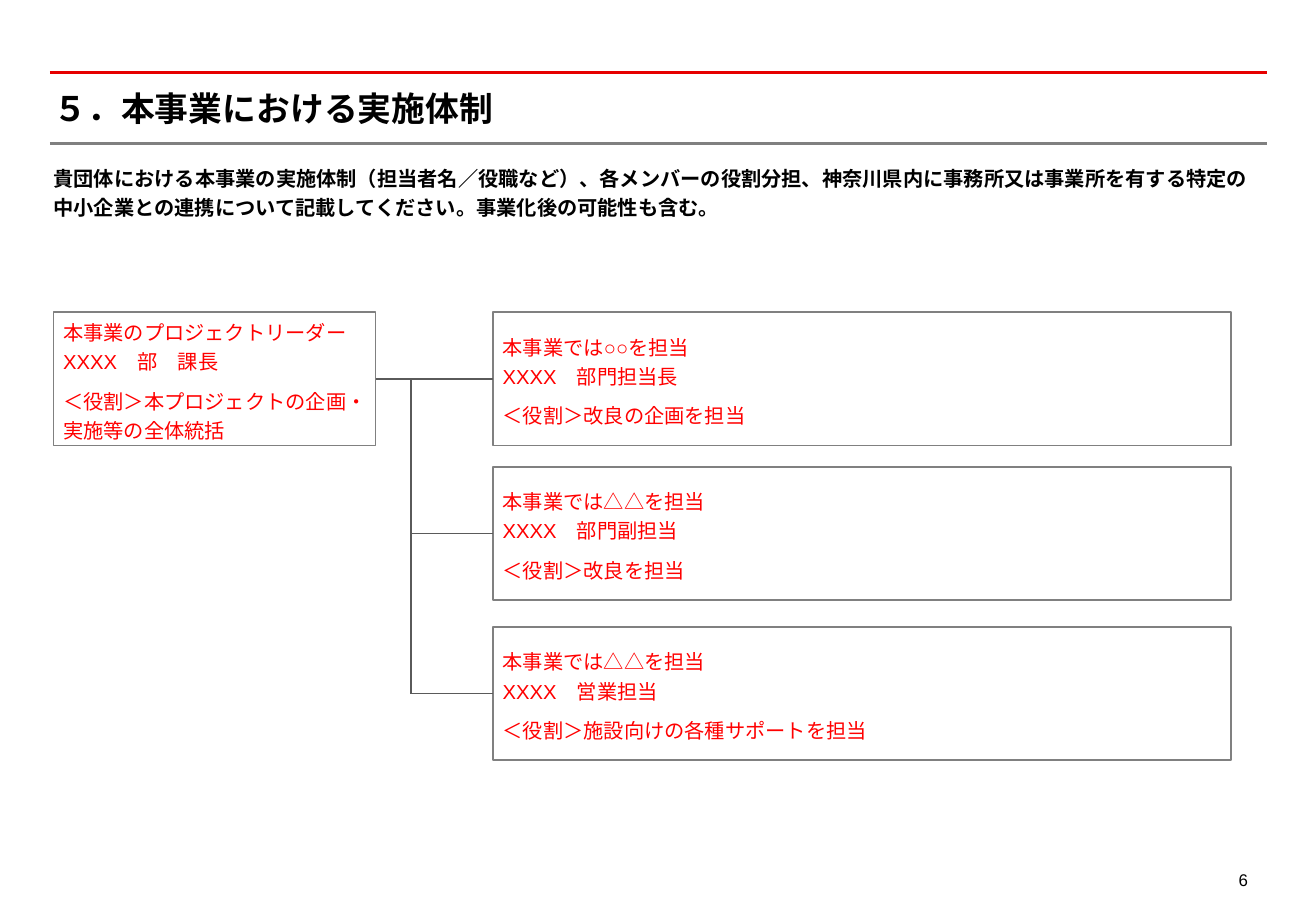
from copy import deepcopy
from itertools import pairwise

from lxml.etree import SubElement
from pptx import Presentation
from pptx.dml.color import RGBColor
from pptx.enum.lang import MSO_LANGUAGE_ID as Language
from pptx.enum.shapes import MSO_CONNECTOR as Connector, MSO_SHAPE as Shape
from pptx.enum.text import MSO_ANCHOR as Anchor, PP_ALIGN as Align
from pptx.oxml.ns import qn
from pptx.util import Cm, Pt

COLORS = {
    "accent": "E60000",
    "rule": "808080",
    "link": "5A5A5A",
    "text": "000000",
    "sample": "FF0000",
}
FONT = "Arial"
TITLE = "５．本事業における実施体制"
LEAD = (
    "貴団体における本事業の実施体制（担当者名／役職など）、各メンバーの役割分担、"
    "神奈川県内に事務所又は事業所を有する特定の中小企業との連携について記載してください。"
    "事業化後の可能性も含む。"
)
LEADER = [
    "本事業のプロジェクトリーダー\nXXXX　部　課長",
    "＜役割＞本プロジェクトの企画・\n実施等の全体統括",
]
MEMBERS = [
    (0, ["本事業では○○を担当\nXXXX　部門担当長", "＜役割＞改良の企画を担当"]),
    (3.23, ["本事業では△△を担当\nXXXX　部門副担当", "＜役割＞改良を担当"]),
    (6.58, ["本事業では△△を担当\nXXXX　営業担当", "＜役割＞施設向けの各種サポートを担当"]),
]


def color(name):
    """Return the named colour."""
    return RGBColor.from_string(COLORS[name])


def write(shape, paragraphs, size=12, ink="text", bold=False, align=Align.LEFT,
          anchor=Anchor.TOP, spacing=1.2, before=0, insets=(0, 0, 0, 0), wrap=True):
    """Fill a shape with formatted paragraphs."""
    frame = shape.text_frame
    frame.word_wrap = wrap
    frame.vertical_anchor = anchor
    (frame.margin_left, frame.margin_top,
     frame.margin_right, frame.margin_bottom) = [Cm(inset) for inset in insets]
    for index, text in enumerate(paragraphs):
        paragraph = frame.add_paragraph() if index else frame.paragraphs[0]
        paragraph.text = text
        paragraph.alignment = align
        paragraph.line_spacing = spacing
        paragraph.space_before = Pt(before)
        for run in paragraph.runs:
            run.font.size = Pt(size)
            run.font.bold = bold
            run.font.language_id = Language.JAPANESE
            run.font.color.rgb = color(ink)
            run.font.name = FONT
            SubElement(run._r.rPr, qn("a:ea"), typeface=FONT)
        for line_break in paragraph._p.findall(qn("a:br")):
            line_break.append(deepcopy(paragraph.runs[0]._r.rPr))


def add_line(slide, start, end, ink, width):
    """Draw a straight line between two points in centimetres."""
    line = slide.shapes.add_connector(
        Connector.STRAIGHT, *[Cm(value) for value in (*start, *end)])
    line.line.color.rgb = color(ink)
    line.line.width = Pt(width)
    SubElement(line._element.spPr, qn("a:effectLst"))
    return line


def add_text(slide, box, text, **style):
    """Add a text box."""
    shape = slide.shapes.add_textbox(*[Cm(value) for value in box])
    write(shape, [text], **style)


def add_role_box(slide, box, paragraphs):
    """Add an outlined box that describes one person."""
    shape = slide.shapes.add_shape(Shape.RECTANGLE, *[Cm(value) for value in box])
    shape.shadow.inherit = False
    shape.fill.background()
    shape.line.color.rgb = color("rule")
    shape.line.width = Pt(1)
    write(shape, paragraphs, ink="sample", anchor=Anchor.MIDDLE, before=6,
          insets=(0.2, 0.05, 0.1, 0.05))
    return shape


def build_header(slide, box):
    """Place the title between its two rules."""
    left, top, width, height = box
    add_line(slide, (left, top), (left + width, top), "accent", 2)
    add_line(slide, (left, top + height), (left + width, top + height), "rule", 1.25)
    title = slide.shapes.title
    title.left, title.top = Cm(left + 0.08), Cm(top + 0.31)
    title.width, title.height = Cm(width - 0.26), Cm(0.86)
    write(title, [TITLE], size=20, bold=True, anchor=Anchor.MIDDLE, spacing=1)


def build_chart(slide, box):
    """Place the leader, the members and the lines that join them."""
    left, top, width, height = box
    leader_width, member_left, trunk = 6.73, left + 9.19, left + 7.47
    leader = add_role_box(slide, (left, top, leader_width, height), LEADER)
    members = [
        add_role_box(slide, (member_left, top + offset, width - 9.19, height), texts)
        for offset, texts in MEMBERS
    ]
    middles = [top + offset + height / 2 for offset, _ in MEMBERS]
    for index, (member, middle) in enumerate(zip(members, middles)):
        start = trunk if index else left + leader_width
        branch = add_line(slide, (start, middle), (member_left, middle), "link", 1)
        if index == 0:
            branch.begin_connect(leader, 3)
        branch.end_connect(member, 1)
    for upper, lower in pairwise([middles[0], middles[-1]]):
        add_line(slide, (trunk, upper), (trunk, lower), "link", 1)


def main():
    """Build the slide and save it."""
    presentation = Presentation()
    presentation.slide_width, presentation.slide_height = Cm(27.51), Cm(19.05)
    slide = presentation.slides.add_slide(presentation.slide_layouts[5])
    build_header(slide, (1.04, 1.52, 25.44, 1.48))
    add_text(slide, (1.12, 3.38, 25.17, 1.17), LEAD, bold=True)
    build_chart(slide, (1.12, 6.53, 24.61, 2.79))
    add_text(slide, (25.22, 17.98, 1.12, 0.71), "6", size=10, align=Align.RIGHT,
             insets=(0.25, 0.13, 0.25, 0.13), wrap=False)
    presentation.save("out.pptx")


if __name__ == "__main__":
    main()
